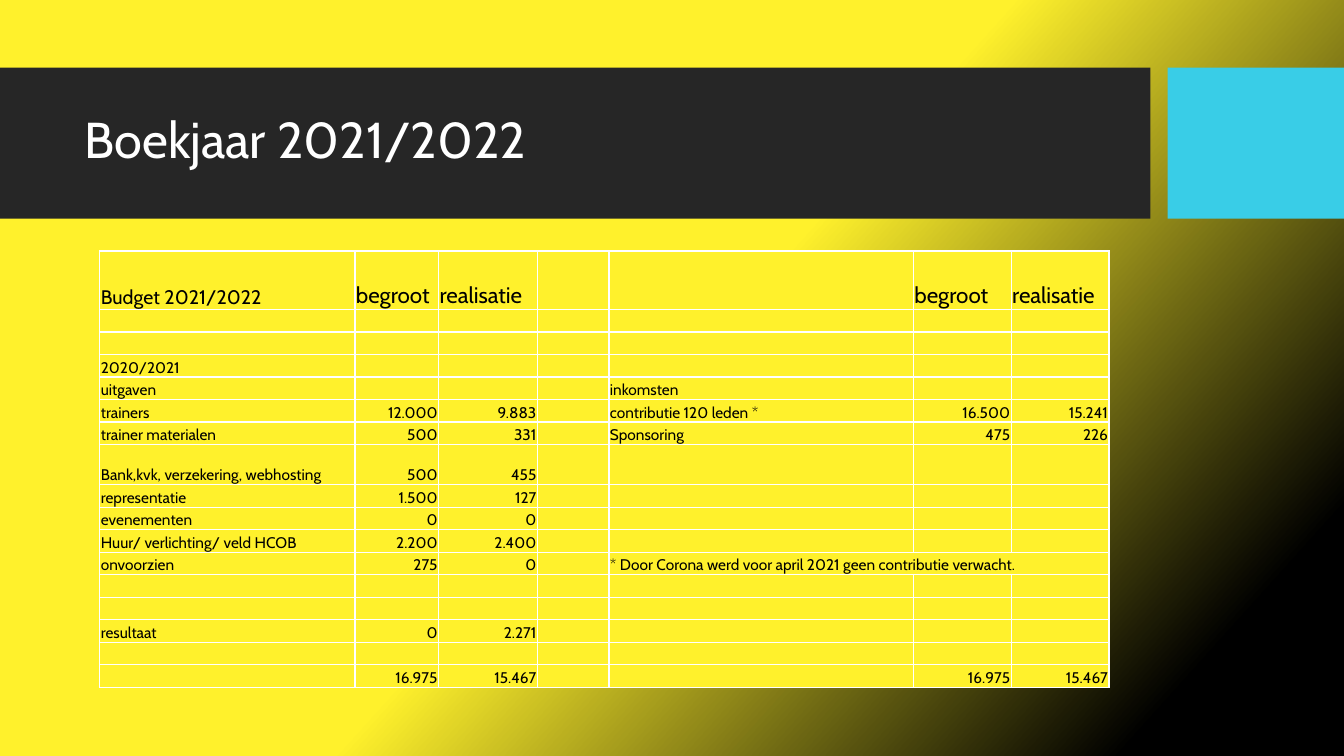
from copy import deepcopy

from lxml.etree import SubElement
from pptx import Presentation
from pptx.dml.color import RGBColor
from pptx.enum.shapes import MSO_SHAPE
from pptx.enum.text import MSO_ANCHOR, PP_ALIGN
from pptx.oxml.ns import qn
from pptx.util import Inches, Pt

RECTANGLE = MSO_SHAPE.RECTANGLE
MIDDLE, BOTTOM = MSO_ANCHOR.MIDDLE, MSO_ANCHOR.BOTTOM
LEFT, RIGHT = PP_ALIGN.LEFT, PP_ALIGN.RIGHT
FONT = "Cabin"
COLORS = {"yellow": "FFF12C", "black": "000000", "band": "262626",
          "accent": "39CDE7", "white": "FFFFFF"}

COLUMN_WIDTHS = [2.53, 0.83, 0.98, 0.71, 3.02, 0.97, 0.97]
TALL_ROWS = {0: 0.58, 7: 0.4}
FOOTNOTE_ROW = 11
BUDGET = [
    ["Budget 2021/2022", "begroot", "realisatie", "", "", "begroot", "realisatie"],
    [],
    [],
    ["2020/2021"],
    ["uitgaven", "", "", "", "inkomsten"],
    ["trainers", "12.000", "9.883", "", "contributie 120 leden *", "16.500", "15.241"],
    ["trainer materialen", "500", "331", "", "Sponsoring", "475", "226"],
    ["Bank,kvk, verzekering, webhosting", "500", "455"],
    ["representatie", "1.500", "127"],
    ["evenementen", "0", "0"],
    ["Huur/ verlichting/ veld HCOB", "2.200", "2.400"],
    ["onvoorzien", "275", "0", "", "* Door Corona werd voor april 2021 geen contributie verwacht."],
    [],
    [],
    ["resultaat", "0", "2.271"],
    [],
    ["", "16.975", "15.467", "", "", "16.975", "15.467"],
]


def color(name):
    """Return the named colour."""
    return RGBColor.from_string(COLORS[name])


def set_values(target, values):
    """Set each attribute in values on the target."""
    for name, value in values.items():
        setattr(target, name, value)


def write_text(frame, text, size, color_name, align=LEFT):
    """Write one line of text, or size the empty line."""
    para = frame.paragraphs[0]
    para.alignment = align
    if text:
        span = para.add_run()
        span.text = text
        set_values(span.font, {"name": FONT, "size": Pt(size)})
        span.font.color.rgb = color(color_name)
    else:
        SubElement(para._p, qn("a:endParaRPr"), sz=str(size * 100))


def paint_background(page):
    """Fill the page with a diagonal gradient from yellow to black."""
    fill = page.background.fill
    fill.gradient()
    fill.gradient_angle = 360 - 42
    stop_list = page.element.find(".//" + qn("a:gsLst"))
    stop_list.append(deepcopy(stop_list[-1]))
    stops = [(0, "yellow"), (0.5, "yellow"), (0.89, "black")]
    for stop, (position, name) in zip(fill.gradient_stops, stops):
        stop.position = position
        stop.color.rgb = color(name)


def add_block(page, left, top, width, height, name):
    """Add a plain filled rectangle."""
    block = page.shapes.add_shape(RECTANGLE, Inches(left), Inches(top),
                                  Inches(width), Inches(height))
    block.shadow.inherit = False
    block.fill.solid()
    block.fill.fore_color.rgb = color(name)
    block.line.fill.background()


def add_header(page, top, height):
    """Add the dark title band, its accent block and the title."""
    add_block(page, 0, top, 11.41, height, "band")
    add_block(page, 11.58, top, 1.75, height, "accent")
    box = page.shapes.add_textbox(Inches(0.74), Inches(top + 0.15),
                                  Inches(10.51), Inches(1.18))
    frame = box.text_frame
    set_values(frame, {"word_wrap": True, "vertical_anchor": MIDDLE})
    write_text(frame, "Boekjaar 2021/2022", 36, "white")
    frame.paragraphs[0].line_spacing = 0.9


def style_cell(cell):
    """Give a cell its margins, white borders and yellow fill."""
    set_values(cell, {"margin_left": Inches(0.01), "margin_right": Inches(0.01),
                      "margin_top": Inches(0.01), "margin_bottom": 0,
                      "vertical_anchor": BOTTOM})
    properties = cell._tc.get_or_add_tcPr()
    for side in ("lnL", "lnR", "lnT", "lnB"):
        line = SubElement(properties, qn("a:" + side), w=str(Pt(1)))
        paint = SubElement(line, qn("a:solidFill"))
        SubElement(paint, qn("a:srgbClr"), val=COLORS["white"])
    cell.fill.solid()
    cell.fill.fore_color.rgb = color("yellow")


def add_budget_table(page, left, top, width, height):
    """Add the table of planned and actual amounts."""
    table = page.shapes.add_table(len(BUDGET), len(COLUMN_WIDTHS), Inches(left),
                                  Inches(top), Inches(width), Inches(height)).table
    set_values(table, {"first_row": False, "horz_banding": False})
    for column, column_width in zip(table.columns, COLUMN_WIDTHS):
        column.width = Inches(column_width)
    row_height = (height - sum(TALL_ROWS.values())) / (len(BUDGET) - len(TALL_ROWS))
    for r, texts in enumerate(BUDGET):
        table.rows[r].height = Inches(TALL_ROWS.get(r, row_height))
        for c in range(len(COLUMN_WIDTHS)):
            cell = table.cell(r, c)
            style_cell(cell)
            text = texts[c] if c < len(texts) else ""
            size = 11 if r else 16 if c else 14
            align = RIGHT if r and text and c not in (0, 4) else LEFT
            write_text(cell.text_frame, text, size, "black", align)
    table.cell(FOOTNOTE_ROW, 4).merge(table.cell(FOOTNOTE_ROW, 6))


def main():
    """Build the budget slide and save it."""
    deck = Presentation()
    set_values(deck, {"slide_width": Inches(13.33), "slide_height": Inches(7.5)})
    page = deck.slides.add_slide(deck.slide_layouts[6])
    paint_background(page)
    add_header(page, 0.67, 1.5)
    add_budget_table(page, 0.99, 2.49, 10.01, 4.33)
    deck.save("out.pptx")


if __name__ == "__main__":
    main()
